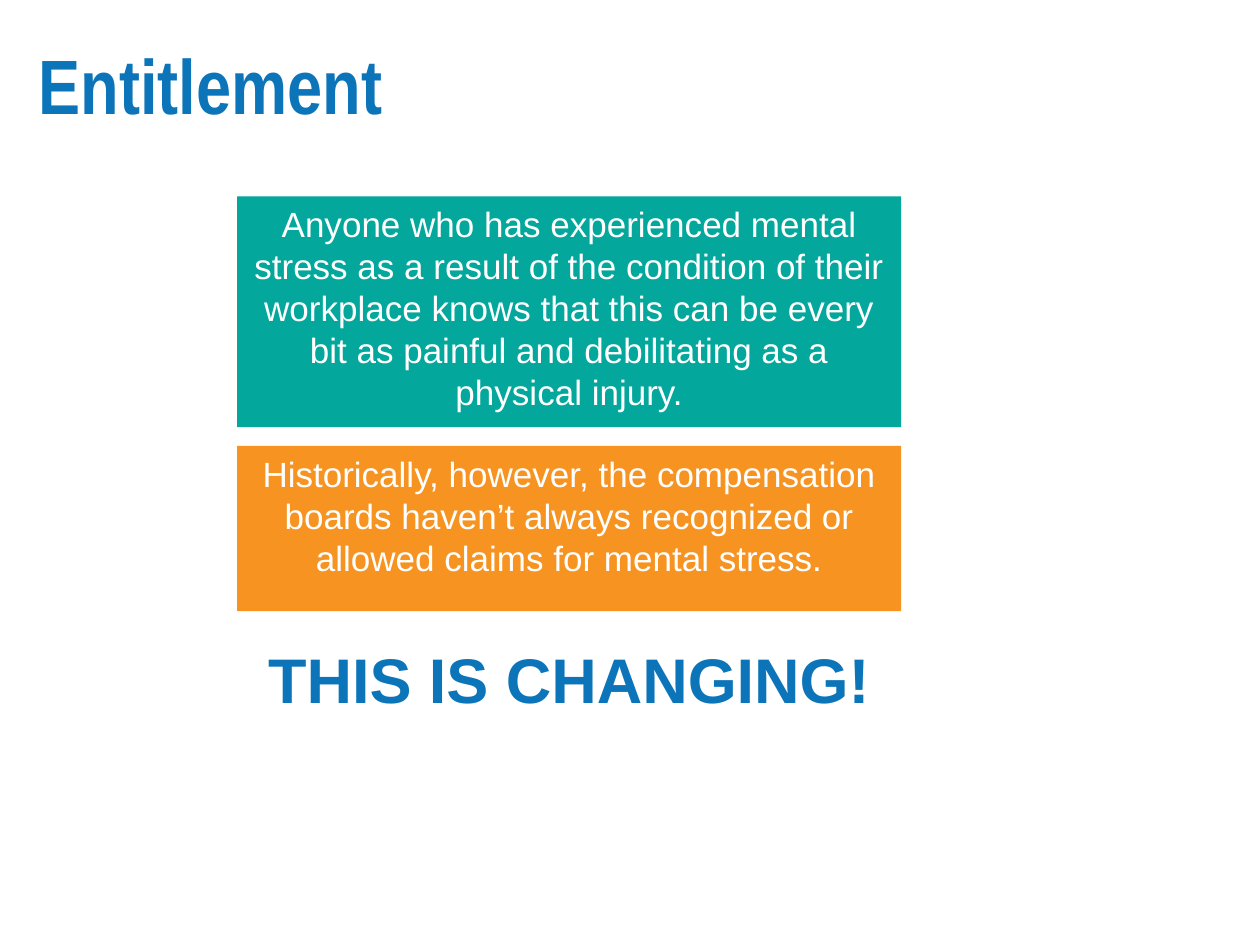
from pptx import Presentation
from pptx.dml.color import RGBColor
from pptx.enum.shapes import MSO_SHAPE
from pptx.enum.text import MSO_ANCHOR, PP_ALIGN
from pptx.util import Cm, Pt

HUES = {"blue": "0C75BA", "teal": "03A79C", "orange": "F69321", "white": "FFFFFF"}
LEFT, WIDTH = Cm(4.78), Cm(13.39)


def color(name):
    return RGBColor.from_string(HUES[name])


def write(shape, text, size, hue, bold=False, face="Arial", align=PP_ALIGN.CENTER):
    frame = shape.text_frame
    frame.text = text
    frame.word_wrap = True
    frame.vertical_anchor = MSO_ANCHOR.TOP
    line = frame.paragraphs[0]
    line.alignment = align
    font = line.runs[0].font
    font.name, font.size, font.bold = face, Pt(size), bold
    font.color.rgb = color(hue)


def add_title(slide, text):
    title = slide.shapes.title
    title.left, title.top = Cm(0.53), Cm(0.84)
    title.width, title.height = Cm(20.14), Cm(3.12)
    write(title, text, 44, "blue", True, "Arial Narrow", PP_ALIGN.LEFT)
    title.text_frame.paragraphs[0].line_spacing = 0.9


def add_panel(slide, top, height, hue, text):
    panel = slide.shapes.add_shape(MSO_SHAPE.RECTANGLE, LEFT, top, WIDTH, height)
    panel.shadow.inherit = False
    panel.fill.solid()
    panel.fill.fore_color.rgb = color(hue)
    panel.line.fill.background()
    write(panel, text, 20, "white")


def add_claim(slide, top, text):
    box = slide.shapes.add_textbox(LEFT, top, WIDTH, Cm(1.8))
    write(box, text, 36, "blue", True)


def main():
    deck = Presentation()
    deck.slide_width, deck.slide_height = Cm(25.4), Cm(19.05)
    slide = deck.slides.add_slide(deck.slide_layouts[5])
    add_title(slide, "Entitlement")
    add_panel(slide, Cm(3.96), Cm(4.65), "teal",
              "Anyone who has experienced mental stress as a result of the condition "
              "of their workplace knows that this can be every bit as painful and "
              "debilitating as a physical injury.")
    add_panel(slide, Cm(8.99), Cm(3.33), "orange",
              "Historically, however, the compensation boards haven’t always "
              "recognized or allowed claims for mental stress.")
    add_claim(slide, Cm(12.78), "THIS IS CHANGING!")
    deck.save("out.pptx")


if __name__ == "__main__":
    main()
